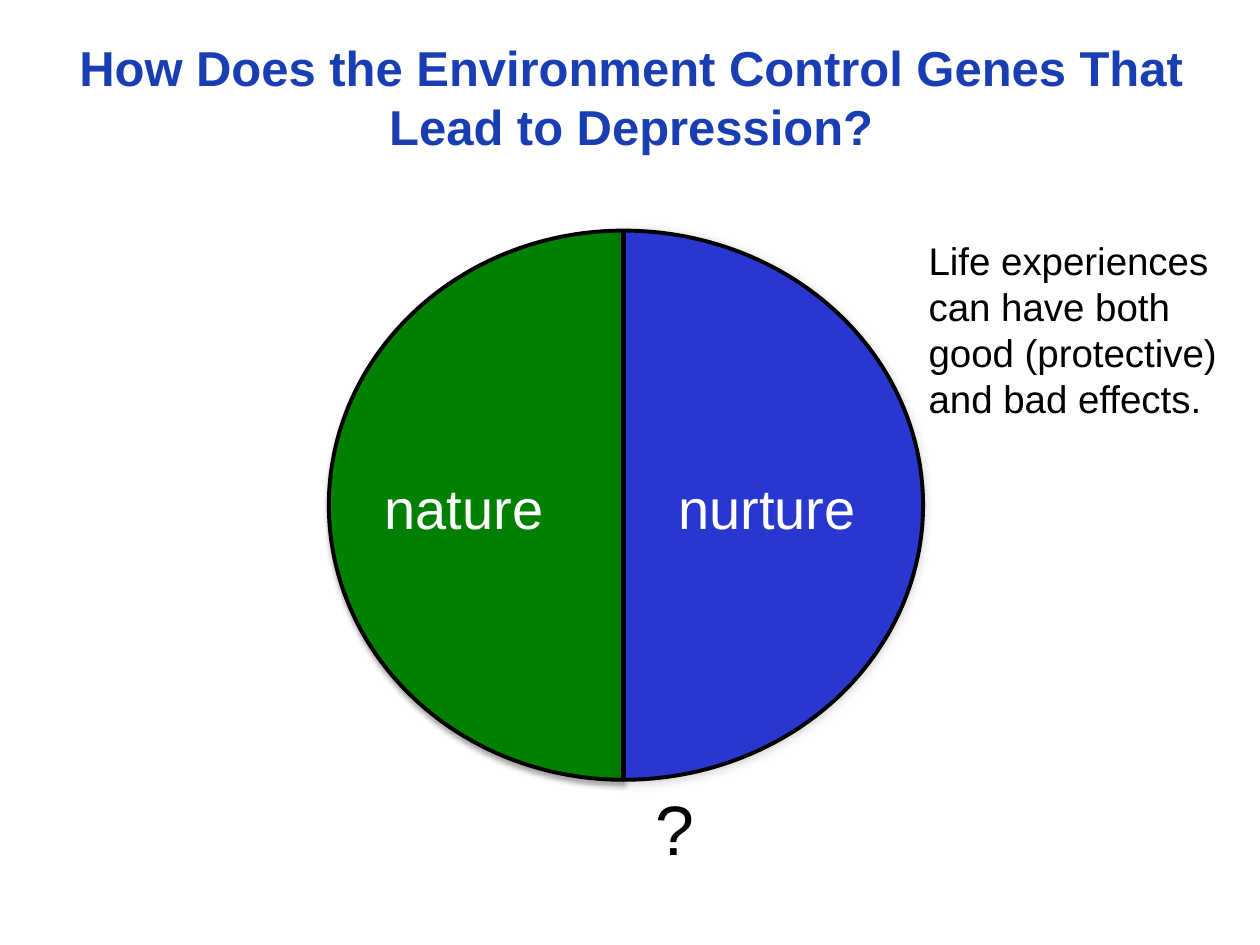
from pptx import Presentation
from pptx.dml.color import RGBColor
from pptx.enum.shapes import MSO_SHAPE as Shape
from pptx.enum.text import MSO_AUTO_SIZE as AutoSize, PP_ALIGN as Align
from pptx.oxml import parse_xml
from pptx.oxml.ns import nsdecls, qn
from pptx.util import Cm, Pt

BLACK = RGBColor(0x00, 0x00, 0x00)
WHITE = RGBColor(0xFF, 0xFF, 0xFF)
GREEN = RGBColor(0x00, 0x80, 0x00)
BLUE = RGBColor(0x29, 0x37, 0xD1)
TITLE_BLUE = RGBColor(0x19, 0x3D, 0xB2)

FONT = "Arial"
CIRCLE_TOP, CIRCLE_HEIGHT = 4.65, 11.07
LABEL_TOP, LABEL_HEIGHT = 9.42, 1.63
DOWN, UP = 90, 270  # degrees, clockwise from the right


def add_shadow(shape, opacity, blur, distance, direction):
    """Give the shape a black outer shadow; opacity in percent, lengths in points."""
    shape.shadow.inherit = False
    effects = shape._element.spPr.find(qn("a:effectLst"))
    effects.append(parse_xml(
        f'<a:outerShdw {nsdecls("a")} blurRad="{Pt(blur)}" dist="{Pt(distance)}" '
        f'dir="{direction * 60000}" rotWithShape="0"><a:srgbClr val="000000">'
        f'<a:alpha val="{opacity * 1000}"/></a:srgbClr></a:outerShdw>'))


def add_half(slide, left, width, start, end, color):
    """Add the half of an ellipse that runs clockwise from start to end."""
    half = slide.shapes.add_shape(
        Shape.CHORD, Cm(left), Cm(CIRCLE_TOP), Cm(width), Cm(CIRCLE_HEIGHT))
    for index, angle in enumerate((start, end)):
        half.adjustments[index] = angle * 0.6  # 60000 units a degree, scaled by 100000
    half.fill.solid()
    half.fill.fore_color.rgb = color
    half.line.color.rgb = BLACK
    half.line.width = Pt(2.25)
    return half


def add_text(slide, text, box, size, color=BLACK, align=Align.LEFT, bold=False, wrap=True):
    text_frame = slide.shapes.add_textbox(*map(Cm, box)).text_frame
    text_frame.text = text
    text_frame.word_wrap = wrap
    text_frame.auto_size = AutoSize.SHAPE_TO_FIT_TEXT
    paragraph = text_frame.paragraphs[0]
    paragraph.alignment = align
    font = paragraph.runs[0].font
    font.name = FONT
    font.size = Pt(size)
    font.bold = bold
    font.color.rgb = color


def add_label(slide, text, left, width):
    add_text(slide, text, (left, LABEL_TOP, width, LABEL_HEIGHT), 32, WHITE,
             Align.CENTER, wrap=False)


def main():
    presentation = Presentation()
    presentation.slide_width = Cm(25.4)
    presentation.slide_height = Cm(19.05)
    slide = presentation.slides.add_slide(presentation.slide_layouts[6])

    nature = add_half(slide, 6.63, 11.86, DOWN, UP, GREEN)
    add_shadow(nature, opacity=35, blur=3.1, distance=1.8, direction=90)
    nurture = add_half(slide, 6.55, 12.06, UP, DOWN, BLUE)
    add_shadow(nurture, opacity=20, blur=6, distance=1, direction=135)
    add_label(slide, "nature", 7.49, 3.73)
    add_label(slide, "nurture", 13.41, 4.11)

    add_text(slide, "?", (12.55, 15.72, 1.7, 1.96), 40, align=Align.RIGHT)
    add_text(slide, "How Does the Environment Control Genes That Lead to Depression?",
             (1.32, 0.64, 22.81, 2.64), 28, TITLE_BLUE, Align.CENTER, bold=True)
    add_text(slide, "Life experiences can have both good (protective) and bad effects.",
             (18.47, CIRCLE_TOP, 6.73, 4.01), 22)

    presentation.save("out.pptx")


if __name__ == "__main__":
    main()
